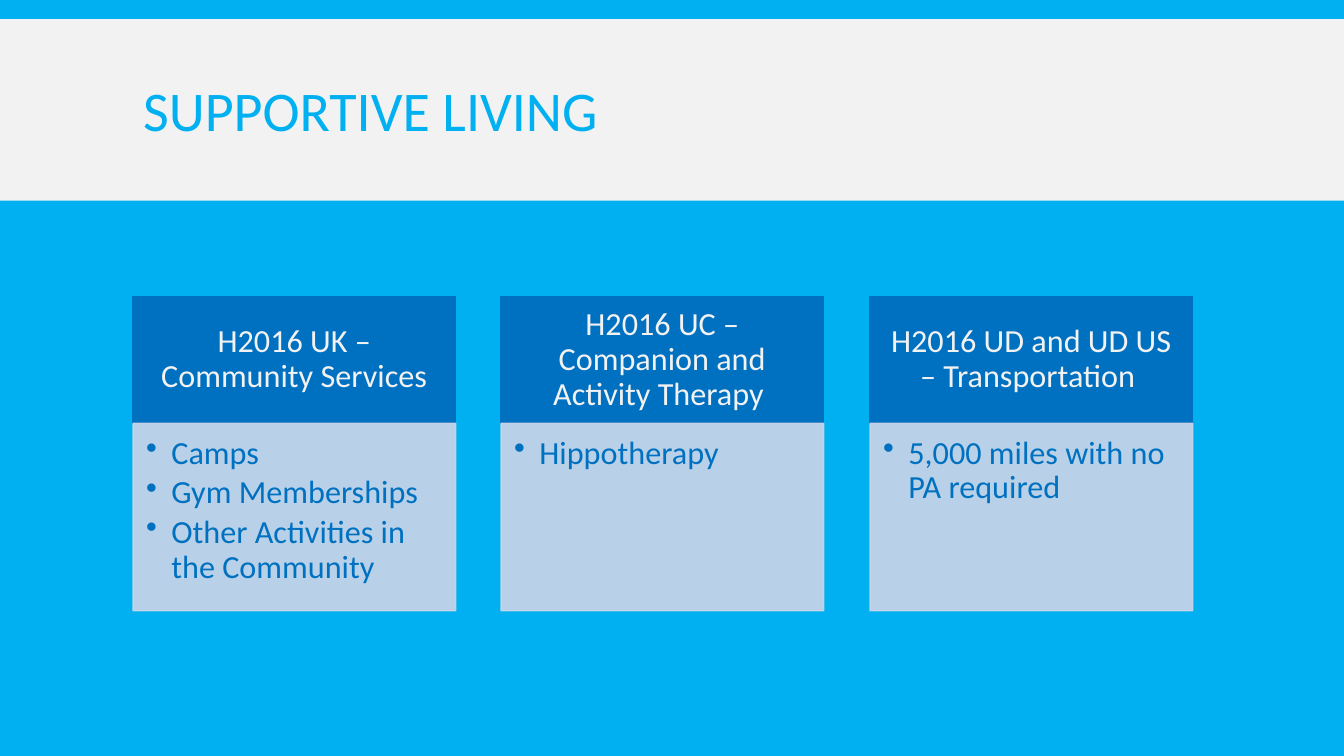
from pptx import Presentation, util as u
from pptx.dml.color import RGBColor
from pptx.enum import shapes, text
from pptx.oxml import xmlchemy
from lxml import etree

PX = 9144  # EMU per px, 100 px to the inch
SKY = RGBColor(0x00, 0xB0, 0xF0)
BLUE = RGBColor(0x00, 0x70, 0xC0)
PALE = RGBColor(0xCC, 0xD5, 0xE8)
LIGHT = RGBColor(0xF2, 0xF2, 0xF2)
A = "http://schemas.openxmlformats.org/drawingml/2006/main"

SERVICES = [
    ("H2016 UK – Community Services",
     ["Camps", "Gym Memberships", "Other Activities in the Community"]),
    ("H2016 UC – Companion and Activity Therapy ", ["Hippotherapy"]),
    ("H2016 UD and UD US – Transportation ", ["5,000 miles with no PA required"]),
]
LEFT, TOP, WIDTH = 132, 294, 320
HEAD_H, BODY_H = 126, 186
SPAN = 731  # from the first column to the third


def add_box(x, y, w, h, color, insets=(0, 0, 0, 0)):
    sp = s.shapes.add_shape(shapes.MSO_SHAPE.RECTANGLE, x * PX, y * PX, w * PX, h * PX)
    sp.shadow.inherit = False
    sp.fill.solid()
    sp.fill.fore_color.rgb = color
    sp.line.color.rgb = color
    sp.line.width = u.Pt(1)
    tf = sp.text_frame
    tf.word_wrap = True
    tf.margin_left, tf.margin_top, tf.margin_right, tf.margin_bottom = [i * PX for i in insets]
    return sp


def style(p, size, color, spacing, align):
    p.font.name = "Calibri"
    p.font.size = u.Pt(size)
    p.font.color.rgb = color
    p.line_spacing = spacing
    p.alignment = align


prs = Presentation()
prs.slide_width, prs.slide_height = 1333 * PX, 750 * PX
s = prs.slides.add_slide(prs.slide_layouts[5])
s.background.fill.solid()
s.background.fill.fore_color.rgb = SKY

# Title on its light band
title = s.shapes.title
band = add_box(0, 19, 1333, 180, LIGHT)
band.line.fill.background()
title._element.addprevious(band._element)
title.left, title.top, title.width, title.height = [v * PX for v in (132, 31, 1070, 165)]
tf = title.text_frame
tf.text = "SUPPORTIVE LIVING"
tf.auto_size = text.MSO_AUTO_SIZE.NONE
tf.vertical_anchor = text.MSO_ANCHOR.MIDDLE
style(tf.paragraphs[0], 40, SKY, 0.85, text.PP_ALIGN.LEFT)

# Service columns
for i, (heading, items) in enumerate(SERVICES):
    x = LEFT + i * SPAN // 2
    head = add_box(x, TOP, WIDTH, HEAD_H, BLUE, (18, 10, 18, 10))
    tf = head.text_frame
    tf.vertical_anchor = text.MSO_ANCHOR.MIDDLE
    tf.text = heading
    style(tf.paragraphs[0], 23, LIGHT, 0.9, text.PP_ALIGN.CENTER)

    body = add_box(x, TOP + HEAD_H, WIDTH, BODY_H, PALE, (13, 13, 18, 20))
    for clr in body._element.spPr.iter(f"{{{A}}}srgbClr"):
        etree.SubElement(clr, f"{{{A}}}alpha", val="90000")
    tf = body.text_frame
    tf.vertical_anchor = text.MSO_ANCHOR.TOP
    tf.text = "\n".join(items)
    for p in tf.paragraphs:
        style(p, 23, BLUE, 0.9, text.PP_ALIGN.LEFT)
        p.level = 1
        p.space_after = u.Pt(3.4)
        # Bullet with a hanging indent
        pPr = p._p.get_or_add_pPr()
        pPr.set("marL", str(25 * PX))
        pPr.set("indent", str(-25 * PX))
        bullet = etree.Element(f"{{{A}}}buChar", char="•")
        pPr.find(f"{{{A}}}defRPr").addprevious(bullet)

prs.save("out.pptx")
